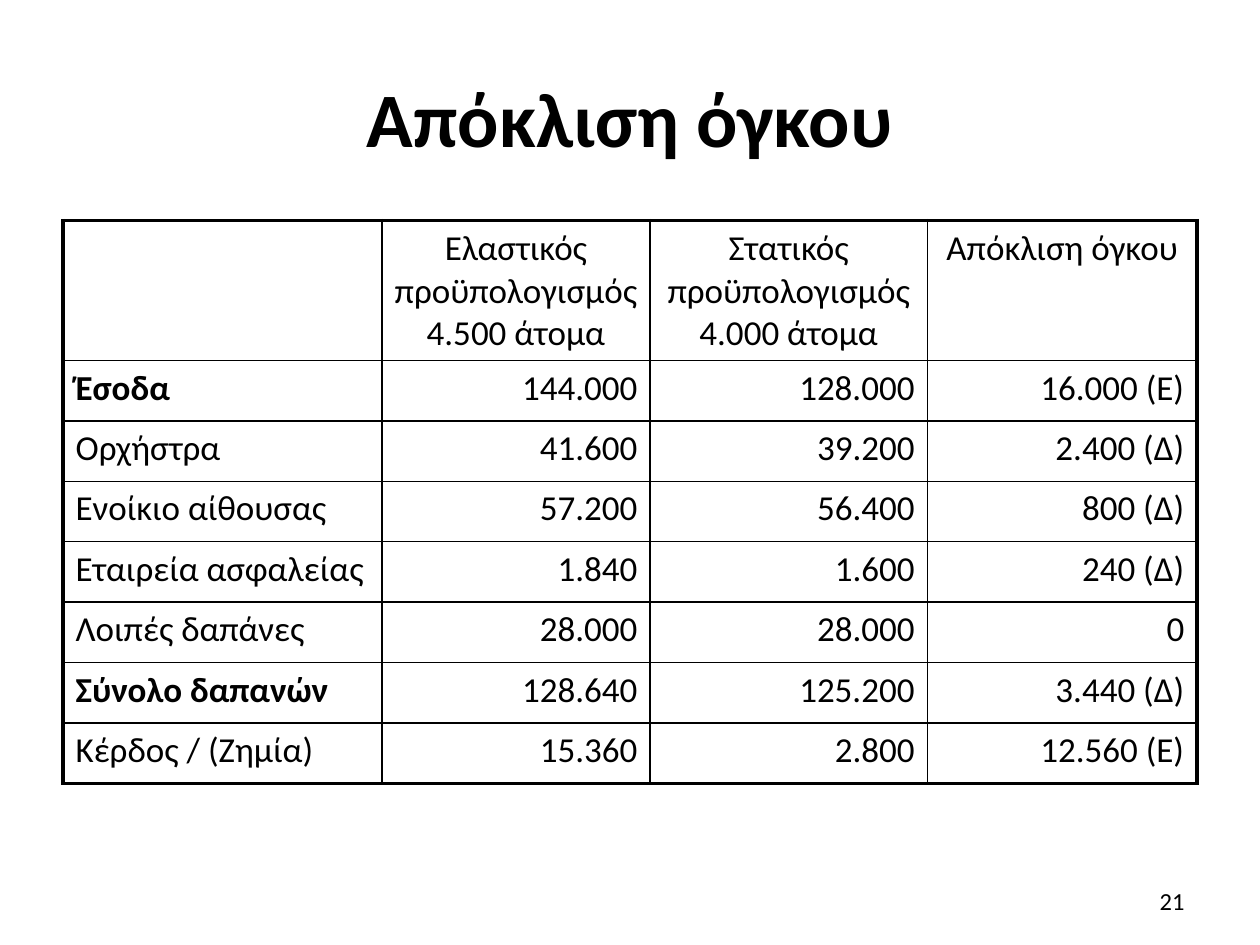
from pptx import Presentation
from pptx.dml.color import RGBColor as Rgb
from pptx.enum.text import MSO_ANCHOR as Anchor, PP_ALIGN as Align
from pptx.oxml.ns import qn
from pptx.util import Inches, Pt
from lxml.etree import SubElement as Sub

COLORS = {"ink": "000000", "paper": "FFFFFF"}
FONT = "Calibri"
THIN, THICK = 1, 2.25
WIDTHS = [2.53, 2.13, 2.2, 2.14]
HEAD_H, ROW_H = 1.11, 0.48
ROWS = [
    ["", "Ελαστικός προϋπολογισμός 4.500 άτομα",
     "Στατικός προϋπολογισμός 4.000 άτομα", "Απόκλιση όγκου"],
    ["Έσοδα", "144.000", "128.000", "16.000 (Ε)"],
    ["Ορχήστρα", "41.600", "39.200", "2.400 (Δ)"],
    ["Ενοίκιο αίθουσας", "57.200", "56.400", "800 (Δ)"],
    ["Εταιρεία ασφαλείας", "1.840", "1.600", "240 (Δ)"],
    ["Λοιπές δαπάνες", "28.000", "28.000", "0"],
    ["Σύνολο δαπανών", "128.640", "125.200", "3.440 (Δ)"],
    ["Κέρδος / (Ζημία)", "15.360", "2.800", "12.560 (Ε)"],
]
BOLD = {"Έσοδα", "Σύνολο δαπανών"}


def write(frame, text, size, align, bold=False):
    """Put one run of text in the first paragraph."""
    para = frame.paragraphs[0]
    para.alignment = align
    run = para.add_run()
    run.text = text
    font = run.font
    font.name, font.size, font.bold = FONT, Pt(size), bold
    font.color.rgb = Rgb.from_string(COLORS["ink"])


def add_text(slide, box, text, size, align, bold=False):
    frame = slide.shapes.add_textbox(*map(Inches, box)).text_frame
    frame.word_wrap = True
    frame.vertical_anchor = Anchor.MIDDLE
    write(frame, text, size, align, bold)


def set_edges(cell, edges):
    """Draw cell borders; they must come before the fill in the XML."""
    props = cell._tc.get_or_add_tcPr()
    for spot, (side, width) in enumerate(edges.items()):
        line = Sub(props, qn("a:ln" + side), w=str(Pt(width)))
        fill = Sub(line, qn("a:solidFill"))
        Sub(fill, qn("a:srgbClr"), val=COLORS["ink"])
        props.insert(spot, line)


def add_grid(slide, left, top):
    high = HEAD_H + ROW_H * (len(ROWS) - 1)
    box = map(Inches, (left, top, sum(WIDTHS), high))
    table = slide.shapes.add_table(len(ROWS), len(WIDTHS), *box).table
    table.first_row = table.horz_banding = False
    for col, width in zip(table.columns, WIDTHS):
        col.width = Inches(width)
    end_r, end_c = len(ROWS) - 1, len(WIDTHS) - 1
    for r, row in enumerate(ROWS):
        table.rows[r].height = Inches(ROW_H if r else HEAD_H)
        for c, text in enumerate(row):
            cell = table.cell(r, c)
            cell.fill.solid()
            cell.fill.fore_color.rgb = Rgb.from_string(COLORS["paper"])
            set_edges(cell, {
                "L": THIN if c else THICK,
                "R": THICK if c == end_c else THIN,
                "T": THIN if r else THICK,
                "B": THICK if r == end_r else THIN,
            })
            if r == 0:  # room for the longest heading word
                cell.margin_left = cell.margin_right = Inches(0.08)
            if text:
                side = Align.RIGHT if c else Align.LEFT
                align = side if r else Align.CENTER
                write(cell.text_frame, text, 20, align, text in BOLD)


def main():
    deck = Presentation()
    deck.slide_width, deck.slide_height = Inches(10), Inches(7.5)
    slide = deck.slides.add_slide(deck.slide_layouts[6])
    # Title
    add_text(slide, (0.5, 0.3, 9, 1.25), "Απόκλιση όγκου", 44,
             Align.CENTER, True)
    # Budget table
    add_grid(slide, 0.5, 1.75)
    # Page number
    add_text(slide, (7.17, 6.95, 2.33, 0.4), "21", 14, Align.RIGHT)
    deck.save("out.pptx")


if __name__ == "__main__":
    main()
